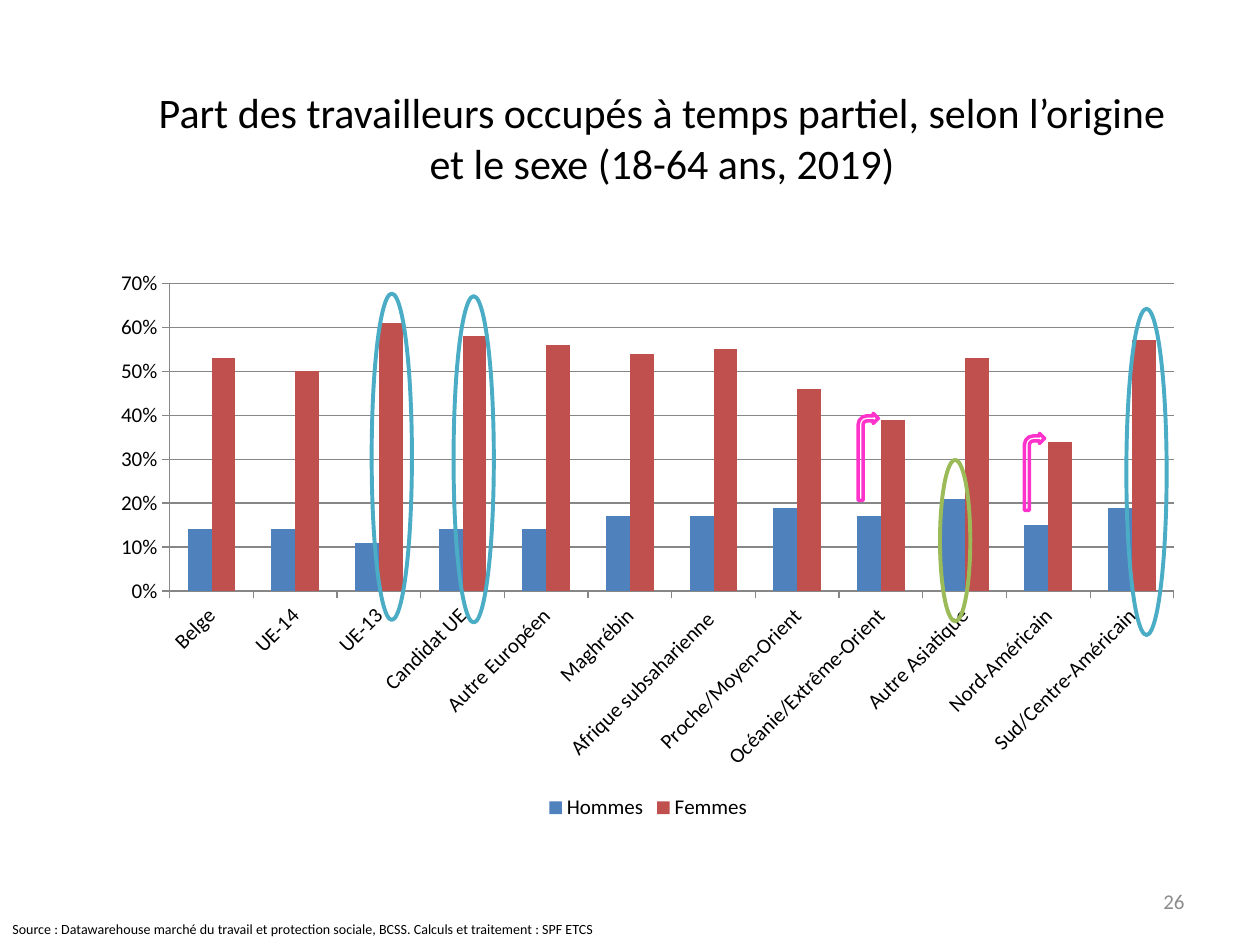
import pptx
import pptx.chart.data
import pptx.dml.color
import pptx.enum.chart
import pptx.enum.shapes
import pptx.enum.text
import pptx.oxml
import pptx.oxml.ns
import pptx.util

FONT = "Calibri"
ALIGN = pptx.enum.text.PP_ALIGN
ANCHOR = pptx.enum.text.MSO_ANCHOR
SHAPE = pptx.enum.shapes.MSO_SHAPE

SHARES = [
    ("Belge", 0.14, 0.53), ("UE-14", 0.14, 0.50), ("UE-13", 0.11, 0.61),
    ("Candidat UE", 0.14, 0.58), ("Autre Européen", 0.14, 0.56),
    ("Maghrébin", 0.17, 0.54), ("Afrique subsaharienne ", 0.17, 0.55),
    ("Proche/Moyen-Orient", 0.19, 0.46), ("Océanie/Extrême-Orient", 0.17, 0.39),
    ("Autre Asiatique", 0.21, 0.53), ("Nord-Américain", 0.15, 0.34),
    ("Sud/Centre-Américain", 0.19, 0.57),
]
SERIES_COLOURS = ["4F81BD", "C0504D"]

# Marks over the bars, in percent of the chart box: left, top, width, height
ARROWS = [(84.27, 30.73, 1.84, 13.59), (69.12, 27.17, 1.84, 15.37)]
MEN_RING = (76.58, 35.41, 2.76, 28.51)
WOMEN_RINGS = [(left, top, 3.67, 57.68)
               for left, top in [(24.8, 6.01), (32.26, 6.46), (93.57, 8.69)]]


def colour(hex_code):
    return pptx.dml.color.RGBColor.from_string(hex_code)


def part_of(box, percents):
    """Turn percents of a box into left, top, width and height."""
    left, top, width, height = box
    x, y, w, h = percents
    return (int(left + width * x / 100), int(top + height * y / 100),
            int(width * w / 100), int(height * h / 100))


def style_font(font, size, hex_code="000000"):
    font.name = FONT
    font.size = pptx.util.Pt(size)
    font.color.rgb = colour(hex_code)


def write_text(shape, box, text, size, align, anchor=ANCHOR.TOP, hex_code="000000"):
    shape.left, shape.top, shape.width, shape.height = box
    frame = shape.text_frame
    frame.text = text
    frame.word_wrap = True
    frame.auto_size = pptx.enum.text.MSO_AUTO_SIZE.NONE
    frame.vertical_anchor = anchor
    para = frame.paragraphs[0]
    para.alignment = align
    style_font(para.runs[0].font, size, hex_code)


def add_title(page, box):
    write_text(page.shapes.title, box,
               "Part des travailleurs occupés à temps partiel, selon l’origine "
               "et le sexe (18-64 ans, 2019)", 24, ALIGN.CENTER)


def add_footer(page, source_box, number_box):
    write_text(page.shapes.add_textbox(*number_box), number_box, "26", 12,
               ALIGN.RIGHT, ANCHOR.MIDDLE, "8C8C8C")
    write_text(page.shapes.add_textbox(*source_box), source_box,
               "Source : Datawarehouse marché du travail et protection sociale, BCSS. "
               "Calculs et traitement : SPF ETCS", 8, ALIGN.LEFT)


def fix_plot_area(chart, x, y, w, h):
    """Pin the inner plot area, in shares of the chart."""
    plot_area = chart.element.chart.plotArea
    for old in plot_area.findall(pptx.oxml.ns.qn("c:layout")):
        plot_area.remove(old)
    sizes = "".join(f'<c:{tag} val="{value}"/>'
                    for tag, value in zip("xywh", (x, y, w, h)))
    plot_area.insert(0, pptx.oxml.parse_xml(
        f'<c:layout {pptx.oxml.ns.nsdecls("c")}><c:manualLayout>'
        '<c:layoutTarget val="inner"/><c:xMode val="edge"/><c:yMode val="edge"/>'
        f'{sizes}</c:manualLayout></c:layout>'))


def add_share_chart(page, box):
    names, men, women = zip(*SHARES)
    data = pptx.chart.data.CategoryChartData()
    data.categories = names
    data.add_series("Hommes", men)
    data.add_series("Femmes", women)
    chart = page.shapes.add_chart(
        pptx.enum.chart.XL_CHART_TYPE.COLUMN_CLUSTERED, *box, data).chart
    style_font(chart.font, 12)
    chart.has_title = False
    chart.has_legend = True
    chart.legend.position = pptx.enum.chart.XL_LEGEND_POSITION.BOTTOM
    chart.legend.include_in_layout = False

    plot = chart.plots[0]
    plot.gap_width = 150
    plot.overlap = 0
    plot.vary_by_categories = False
    for series, hex_code in zip(plot.series, SERIES_COLOURS):
        series.format.fill.solid()
        series.format.fill.fore_color.rgb = colour(hex_code)

    values, categories = chart.value_axis, chart.category_axis
    values.minimum_scale, values.maximum_scale, values.major_unit = 0, 0.7, 0.1
    values.has_major_gridlines = True
    values.tick_labels.number_format = "0%"
    values.tick_labels.number_format_is_linked = False
    style_font(categories.tick_labels.font, 12)
    # Slanted category labels
    categories.format.line.color.rgb = colour("878787")
    body = categories._element.txPr.find(pptx.oxml.ns.qn("a:bodyPr"))
    body.set("rot", "-2700000")
    body.set("vert", "horz")
    for line in (values.format.line, values.major_gridlines.format.line):
        line.color.rgb = colour("878787")
    for axis in (values, categories):
        axis.major_tick_mark = pptx.enum.chart.XL_TICK_MARK.OUTSIDE
    fix_plot_area(chart, 0.064, 0.042, 0.915, 0.544)


def add_mark(page, kind, box, hex_code, width):
    mark = page.shapes.add_shape(kind, *box)
    mark.shadow.inherit = False
    mark.fill.background()
    mark.line.color.rgb = colour(hex_code)
    mark.line.width = pptx.util.Pt(width)


def add_marks(page, box):
    for arrow in ARROWS:
        add_mark(page, SHAPE.BENT_ARROW, part_of(box, arrow), "FF33CC", 2)
    add_mark(page, SHAPE.OVAL, part_of(box, MEN_RING), "9BBB59", 2.25)
    for ring in WOMEN_RINGS:
        add_mark(page, SHAPE.OVAL, part_of(box, ring), "4BACC6", 2.25)


def main():
    deck = pptx.Presentation()
    deck.slide_width = pptx.util.Inches(10)
    deck.slide_height = pptx.util.Inches(7.5)
    page = deck.slides.add_slide(deck.slide_layouts[5])
    whole = (0, 0, deck.slide_width, deck.slide_height)
    chart_box = part_of(whole, (7.9, 27.47, 87.1, 59.87))

    add_title(page, part_of(whole, (11.4, 8.53, 82.3, 9.47)))
    add_footer(page, part_of(whole, (0, 96.8, 50.7, 3.2)),
               part_of(whole, (71.7, 92.67, 23.3, 5.33)))
    add_share_chart(page, chart_box)
    add_marks(page, chart_box)
    deck.save("out.pptx")


if __name__ == "__main__":
    main()
